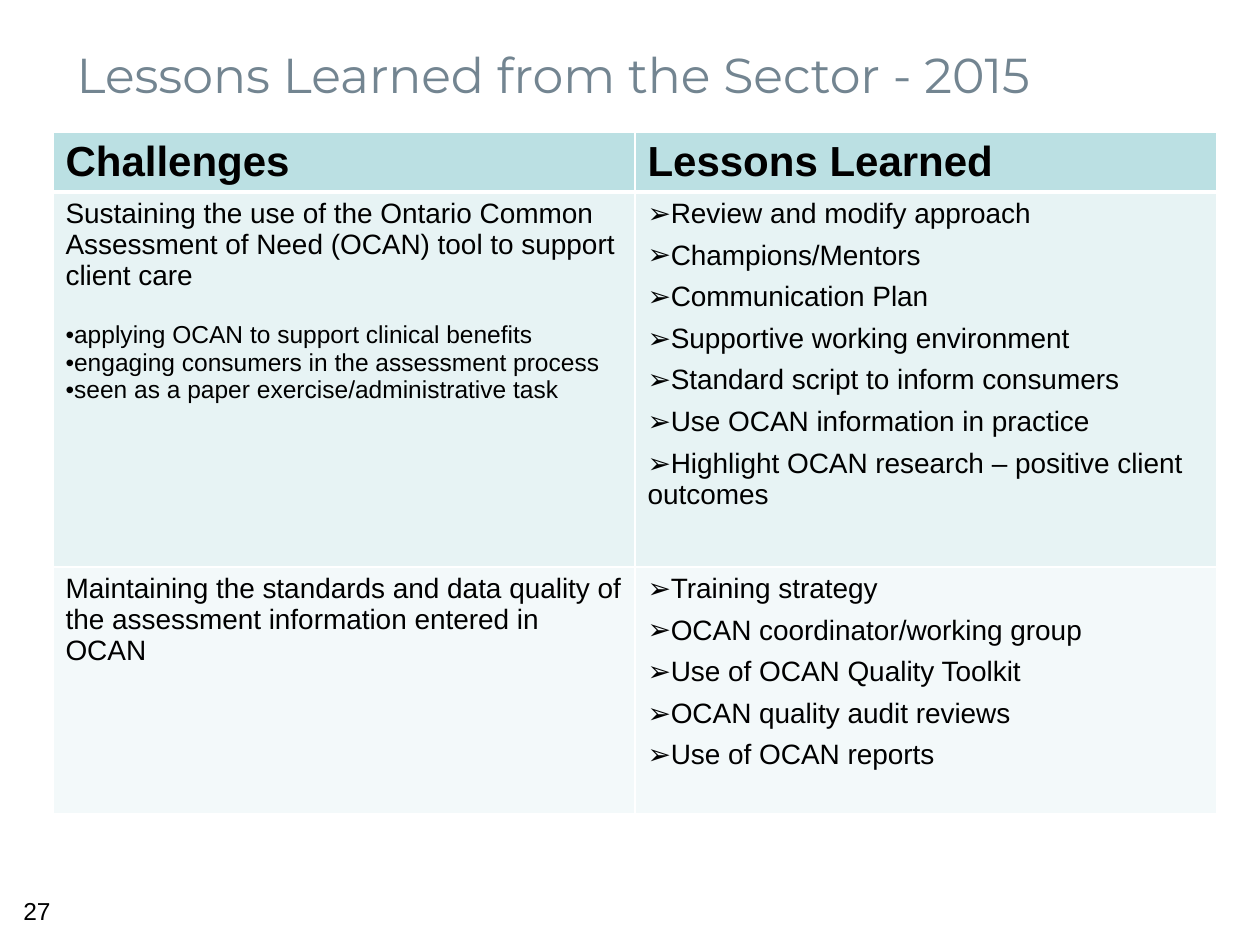
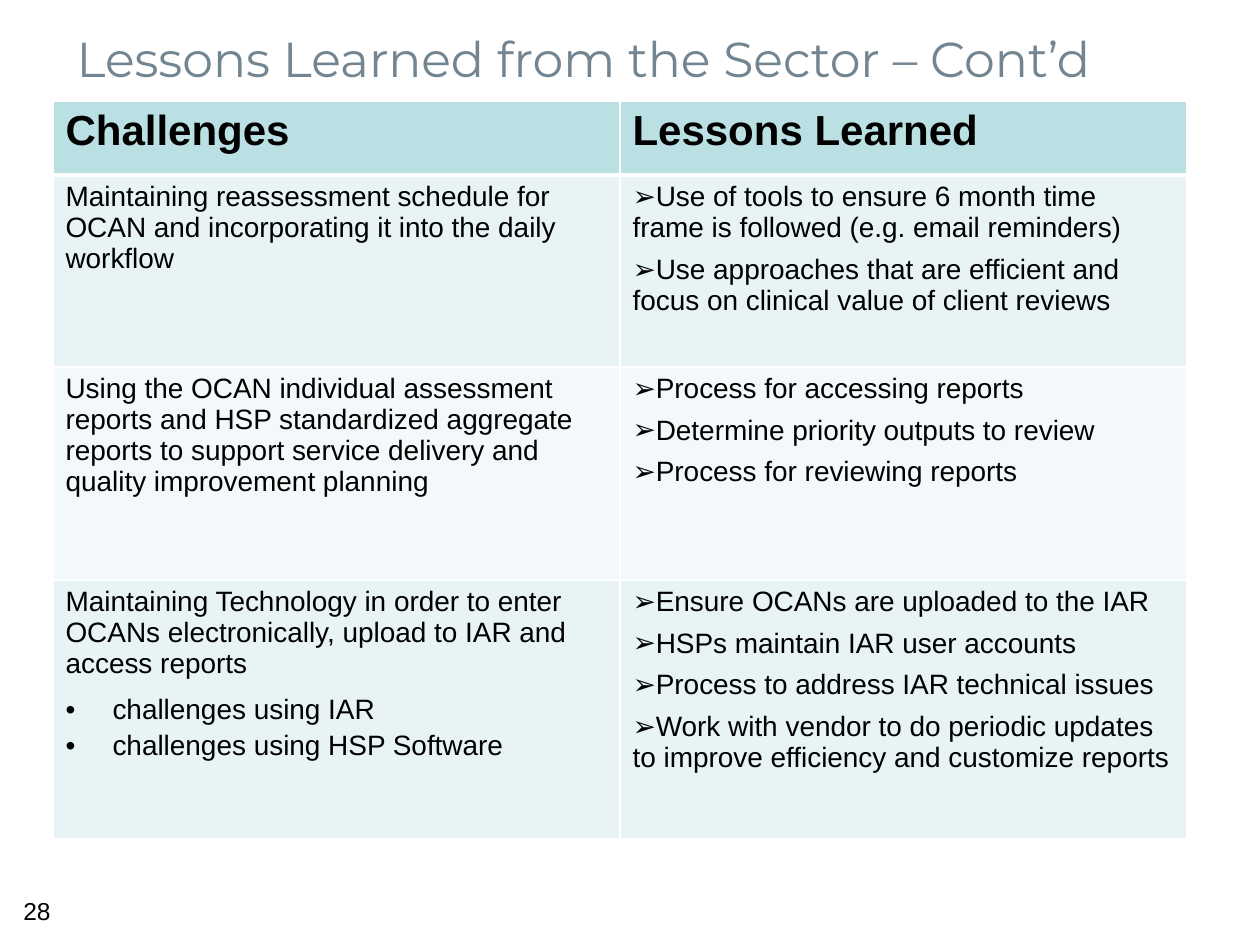
from lxml import etree
from pptx import Presentation
from pptx.dml.color import RGBColor
from pptx.enum.text import MSO_ANCHOR, PP_ALIGN
from pptx.oxml.ns import qn
from pptx.util import Pt

LEFT, RIGHT = PP_ALIGN.LEFT, PP_ALIGN.RIGHT
MIDDLE = MSO_ANCHOR.MIDDLE
SCALE = 914400 / 126  # EMU in one px
COLORS = {"title": "738591", "text": "000000", "head": "BBE0E3",
          "odd": "E7F3F4", "even": "F3F9FA", "line": "FFFFFF"}
SANS, TITLE = "Arial", "Montserrat"

# Paragraph styles: size, bold, bullet, hanging indent in px, space after, line spacing
STYLES = {
    "head": (24, True, None, 0, 0, 1),
    "plain": (16, False, None, 0, 0, 1),
    "lead": (16, False, None, 0, 17, 1),
    "intro": (16, False, None, 0, 6, 1),
    "small": (14, False, "•", 0, 0, 1),
    "dot": (16, False, "•", 47, 0, 1.15),
    "arrow": (16, False, "➢", 0, 6, 1),
}
HEADS = ("Challenges", "Lessons Learned")

# Each row: styled challenge paragraphs, then lessons
FIRST = [
    ([("lead", "Sustaining the use of the Ontario Common Assessment of Need "
               "(OCAN) tool to support client care"),
      ("small", "applying OCAN to support clinical benefits"),
      ("small", "engaging consumers in the assessment process"),
      ("small", "seen as a paper exercise/administrative task")],
     ["Review and modify approach", "Champions/Mentors", "Communication Plan",
      "Supportive working environment", "Standard script to inform consumers",
      "Use OCAN information in practice",
      "Highlight OCAN research – positive client outcomes"]),
    ([("plain", "Maintaining the standards and data quality of the assessment "
                "information entered in OCAN")],
     ["Training strategy", "OCAN coordinator/working group",
      "Use of OCAN Quality Toolkit", "OCAN quality audit reviews",
      "Use of OCAN reports"]),
]
SECOND = [
    ([("plain", "Maintaining reassessment schedule for OCAN and incorporating "
                "it into the daily workflow")],
     ["Use of tools to ensure 6 month time frame is followed "
      "(e.g. email reminders)",
      "Use approaches that are efficient and focus on clinical value of "
      "client reviews"]),
    ([("plain", "Using the OCAN individual assessment reports and HSP "
                "standardized aggregate reports to support service delivery "
                "and quality improvement planning")],
     ["Process for accessing reports", "Determine priority outputs to review",
      "Process for reviewing reports"]),
    ([("intro", "Maintaining Technology in order to enter OCANs "
                "electronically, upload to IAR and access reports"),
      ("dot", "challenges using IAR"),
      ("dot", "challenges using HSP Software")],
     ["Ensure OCANs are uploaded to the IAR", "HSPs maintain IAR user accounts",
      "Process to address IAR technical issues",
      "Work with vendor to do periodic updates to improve efficiency and "
      "customize reports"]),
]


def px(n):
    return round(n * SCALE)


def rgb(name):
    return RGBColor.from_string(COLORS[name])


def set_font(para, face, size, color, bold=False):
    font = para.font
    font.name, font.size, font.bold = face, Pt(size), bold
    font.color.rgb = rgb(color)


def set_bullet(para, char, hang):
    props = para._p.get_or_add_pPr()
    props.set("marL", str(px(hang)))
    props.set("indent", str(-px(hang)))
    etree.SubElement(props, qn("a:buFont"), typeface=SANS)
    etree.SubElement(props, qn("a:buChar"), char=char)


def set_border(cell, widths):
    props = cell._tc.get_or_add_tcPr()
    for side, width in zip("LRTB", widths):
        line = etree.SubElement(props, qn("a:ln" + side), w=str(Pt(width)))
        fill = etree.SubElement(line, qn("a:solidFill"))
        etree.SubElement(fill, qn("a:srgbClr"), val=COLORS["line"])


def fill_cell(cell, items, color, widths):
    set_border(cell, widths)
    cell.fill.solid()
    cell.fill.fore_color.rgb = rgb(color)
    frame = cell.text_frame
    for i, (style, text) in enumerate(items):
        size, bold, char, hang, after, lines = STYLES[style]
        para = frame.add_paragraph() if i else frame.paragraphs[0]
        para.text = text
        if char:
            set_bullet(para, char, hang)
        para.space_after = Pt(after)
        para.line_spacing = lines
        set_font(para, SANS, size, "text", bold)


def add_title(slide, text, box):
    title = slide.shapes.title
    title.left, title.top, title.width, title.height = map(px, box)
    frame = title.text_frame
    frame.text = text
    frame.vertical_anchor = MIDDLE
    para = frame.paragraphs[0]
    para.alignment = LEFT
    set_font(para, TITLE, 28, "title")


def add_grid(slide, rows, box, heights):
    x, y, w, h = map(px, box)
    table = slide.shapes.add_table(len(heights), 2, x, y, w, h).table
    table.first_row = table.horz_banding = False
    for col in table.columns:
        col.width = w // 2
    for row, height in zip(table.rows, heights):
        row.height = px(height)

    # Header row, with a thick rule below
    for c, text in enumerate(HEADS):
        fill_cell(table.cell(0, c), [("head", text)], "head", (1, 1, 1, 3))

    # Body rows in alternating tints
    for r, (issues, lessons) in enumerate(rows, 1):
        color = "odd" if r % 2 else "even"
        widths = (1, 1, 3 if r == 1 else 1, 1)
        fill_cell(table.cell(r, 0), issues, color, widths)
        arrows = [("arrow", text) for text in lessons]
        fill_cell(table.cell(r, 1), arrows, color, widths)


def add_number(slide, number, box):
    frame = slide.shapes.add_textbox(*map(px, box)).text_frame
    frame.word_wrap = True
    para = frame.paragraphs[0]
    para.text = str(number)
    para.alignment = RIGHT
    set_font(para, SANS, 14, "text")


def add_page(deck, number, title, head, rows, box, heights):
    slide = deck.slides.add_slide(deck.slide_layouts[5])
    add_title(slide, title, head)
    add_grid(slide, rows, (*box, sum(heights)), heights)
    add_number(slide, number, (0, 890, 63, 55))


def main():
    deck = Presentation()
    deck.slide_width, deck.slide_height = px(1260), px(945)
    add_page(deck, 27, "Lessons Learned from the Sector - 2015",
             (64, 0, 1134, 147), FIRST, (53, 132, 1164), (60, 375, 247))
    add_page(deck, 28, "Lessons Learned from the Sector – Cont’d",
             (64, 0, 1196, 116), SECOND, (53, 101, 1134), (74, 192, 213, 259))
    deck.save("out.pptx")


if __name__ == "__main__":
    main()
